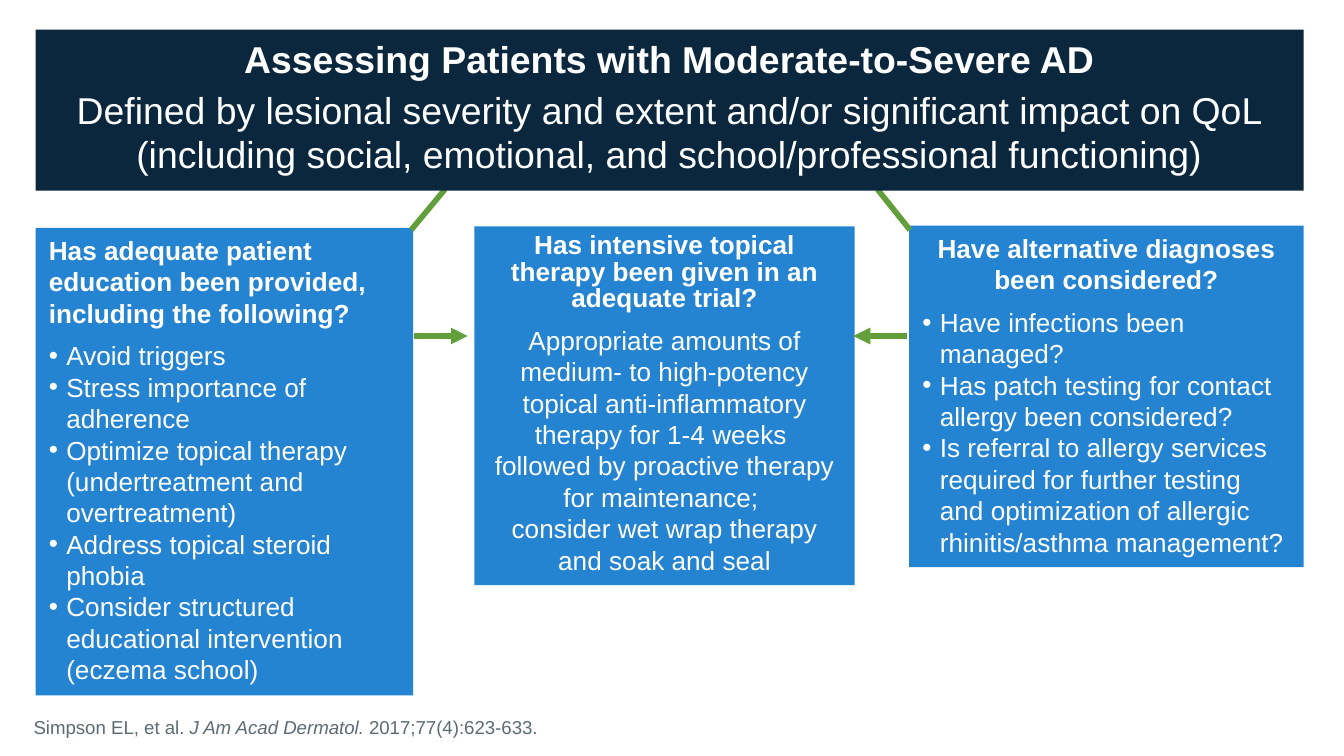
from lxml.etree import SubElement as Sub
from pptx import Presentation
from pptx.dml.color import RGBColor
from pptx.enum.shapes import MSO_CONNECTOR as Link, MSO_SHAPE as Kind
from pptx.enum.text import MSO_ANCHOR as Anchor, PP_ALIGN as Align
from pptx.oxml.ns import qn
from pptx.util import Pt

PX = 4572
WIDE, HIGH = 2000, 1125
NAVY = RGBColor(0x0B, 0x27, 0x3E)
BLUE = RGBColor(0x25, 0x84, 0xD2)
GREEN = RGBColor(0x62, 0x9E, 0x3A)
GREY = RGBColor(0x5C, 0x6B, 0x72)
WHITE = RGBColor(0xFF, 0xFF, 0xFF)
LEFT, MID = Align.LEFT, Align.CENTER

LINES = [
    ((616, 500), (696, 500), True),
    ((1350, 500), (1270, 500), True),
    ((612, 342), (662, 282), False),
    ((1354, 342), (1306, 282), False),
]
CARD = dict(fill=BLUE, size=14, after=6, pad=10)
CARDS = [
    dict(CARD, at=(53, 339, 562, 696), align=LEFT, tight=None,
         head="Has adequate patient education been provided, including the following?",
         items=["Avoid triggers",
                "Stress importance of adherence",
                "Optimize topical therapy (undertreatment and overtreatment)",
                "Address topical steroid phobia",
                "Consider structured educational intervention (eczema school)"]),
    dict(CARD, at=(1353, 336, 587, 508), align=MID, tight=None,
         head="Have alternative diagnoses been considered?",
         items=["Have infections been managed?",
                "Has patch testing for contact allergy been considered?",
                "Is referral to allergy services required for further testing "
                "and optimization of allergic rhinitis/asthma management?"]),
    dict(CARD, at=(706, 337, 566, 534), align=MID, tight=0.85,
         head="Has intensive topical therapy been given in an adequate trial?",
         body="Appropriate amounts of medium- to high-potency topical "
              "anti-inflammatory therapy for 1-4 weeks \v"
              "followed by proactive therapy for maintenance; \v"
              "consider wet wrap therapy and soak and seal"),
]
BANNER = dict(
    at=(53, 44, 1887, 240), fill=NAVY, size=20, align=MID, tight=0.85, after=3, pad=20,
    head="Assessing Patients with Moderate-to-Severe AD",
    body="Defined by lesional severity and extent and/or significant impact on QoL "
         "(including social, emotional, and school/professional functioning)")
SOURCE = [("Simpson EL, et al. ", False), ("J Am Acad Dermatol. ", True),
          ("2017;77(4):623-633.", False)]


def scale(nums):
    return [n * PX for n in nums]


def style(para, size, color, bold=False):
    font = para.font
    font.name, font.size, font.bold = "Arial", Pt(size), bold
    font.color.rgb = color


def inset(frame, left, top, right, bottom):
    frame.word_wrap = True
    frame.margin_left, frame.margin_top, frame.margin_right, frame.margin_bottom = scale(
        (left, top, right, bottom))


def bullet(para):
    props = para._p.get_or_add_pPr()
    props.set("marL", str(26 * PX))
    props.set("indent", str(-26 * PX))
    Sub(props, qn("a:buFont"), typeface="Arial")
    Sub(props, qn("a:buChar"), char="•")


def add_line(slide, start, end, arrow):
    line = slide.shapes.add_connector(Link.STRAIGHT, *scale(start + end))
    line.line.color.rgb = GREEN
    line.line.width = Pt(3)
    if arrow:
        Sub(line.line._get_or_add_ln(), qn("a:tailEnd"), type="triangle")
    Sub(line._element.spPr, qn("a:effectLst"))


def add_box(slide, box):
    shape = slide.shapes.add_shape(Kind.RECTANGLE, *scale(box["at"]))
    shape.shadow.inherit = False
    shape.fill.solid()
    shape.fill.fore_color.rgb = box["fill"]
    shape.line.fill.background()
    frame = shape.text_frame
    frame.vertical_anchor = Anchor.TOP
    inset(frame, 20, box["pad"], 20, box["pad"])
    head = frame.paragraphs[0]
    head.text = box["head"]
    head.alignment = box["align"]
    head.line_spacing = box["tight"]
    head.space_after = Pt(box["after"])
    style(head, box["size"], WHITE, True)
    items = box.get("items")
    for text in items or [box["body"]]:
        para = frame.add_paragraph()
        para.text = text
        para.alignment = LEFT if items else MID
        if items:
            bullet(para)
        style(para, box["size"], WHITE)


def add_source(slide):
    frame = slide.shapes.add_textbox(*scale((0, HIGH - 64, WIDE, 64))).text_frame
    inset(frame, 50, 10, 0, 26)
    frame.vertical_anchor = Anchor.BOTTOM
    para = frame.paragraphs[0]
    para.line_spacing = 0.85
    style(para, 10, GREY)
    for text, slant in SOURCE:
        run = para.add_run()
        run.text = text
        run.font.italic = slant


def main():
    """Build the slide on assessing patients with moderate-to-severe AD."""
    deck = Presentation()
    deck.slide_width, deck.slide_height = scale((WIDE, HIGH))
    slide = deck.slides.add_slide(deck.slide_layouts[6])
    for card in CARDS:
        add_box(slide, card)
    for line in LINES:
        add_line(slide, *line)
    add_box(slide, BANNER)
    add_source(slide)
    deck.save("out.pptx")


if __name__ == "__main__":
    main()
